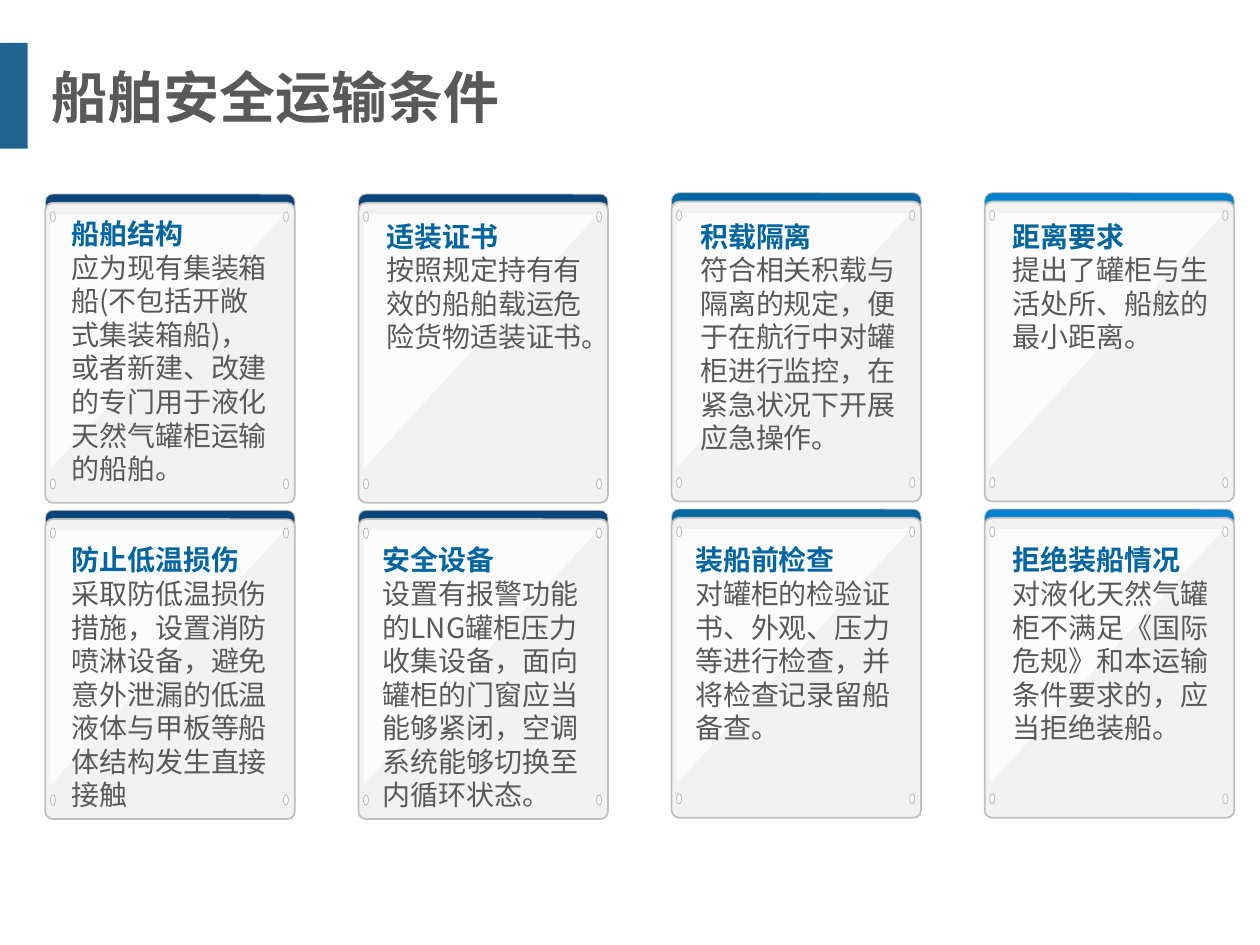
from lxml.etree import SubElement
from pptx import Presentation
from pptx.dml.color import RGBColor
from pptx.enum.shapes import MSO_SHAPE
from pptx.enum.text import MSO_ANCHOR, PP_ALIGN
from pptx.oxml.ns import qn
from pptx.util import Inches, Pt

FONT = "Noto Sans CJK SC"
GREY, BORDER, HEADING = "595959", "BFBFBF", "0365A1"
GRID_LEFT, GRID_TOP = 0.36, 1.54
COLUMN_PITCH, ROW_PITCH = 2.485, 2.51
CARD_WIDTH, CARD_HEIGHT = 1.98, 2.38
COLUMN_BANDS = ["0A467C", "0A467C", "0365A1", "0481CE"]
COLUMN_LIFTS = [0, 0, 0.01, 0.01]

CONDITIONS = [
    [
        (0.47, 1.67, "船舶结构", "应为现有集装箱船(不包括开敞式集装箱船)，或者新建、改建的专门用于液化天然气罐柜运输的船舶。"),
        (2.97, 1.69, "适装证书", "按照规定持有有效的船舶载运危险货物适装证书。"),
        (5.46, 1.69, "积载隔离", "符合相关积载与隔离的规定，便于在航行中对罐柜进行监控，在紧急状况下开展应急操作。"),
        (7.94, 1.69, "距离要求", "提出了罐柜与生活处所、船舷的最小距离。"),
    ],
    [
        (0.47, 4.26, "防止低温损伤", "采取防低温损伤措施，设置消防喷淋设备，避免意外泄漏的低温液体与甲板等船体结构发生直接接触"),
        (2.94, 4.26, "安全设备", "设置有报警功能的LNG罐柜压力收集设备，面向罐柜的门窗应当能够紧闭，空调系统能够切换至内循环状态。"),
        (5.42, 4.26, "装船前检查", "对罐柜的检验证书、外观、压力等进行检查，并将检查记录留船备查。"),
        (7.94, 4.26, "拒绝装船情况", "对液化天然气罐柜不满足《国际危规》和本运输条件要求的，应当拒绝装船。"),
    ],
]


def color(hex_string):
    return RGBColor.from_string(hex_string)


def add_figure(shapes, preset, box, fill, border_width=None, opacity=None):
    figure = shapes.add_shape(preset, *map(Inches, box))
    figure.shadow.inherit = False
    figure.fill.solid()
    figure.fill.fore_color.rgb = color(fill)
    if opacity is not None:
        tint = figure._element.spPr.find(qn("a:solidFill"))[0]
        SubElement(tint, qn("a:alpha"), val=str(opacity * 1000))
    if border_width is None:
        figure.line.fill.background()
    else:
        figure.line.color.rgb = color(BORDER)
        figure.line.width = Pt(border_width)
    return figure


def format_paragraph(paragraph, size, hex_string, bold):
    paragraph.alignment = PP_ALIGN.LEFT
    for run in paragraph.runs:
        run.font.size = Pt(size)
        run.font.bold = bold
        run.font.name = FONT
        run.font.color.rgb = color(hex_string)
        SubElement(run._r.get_or_add_rPr(), qn("a:ea"), typeface=FONT)


def add_title(slide, wording):
    title = slide.shapes.title
    title.left, title.top, title.width, title.height = map(Inches, (0.31, 0.34, 8.79, 0.84))
    title.text_frame.text = wording
    title.text_frame.vertical_anchor = MSO_ANCHOR.MIDDLE
    format_paragraph(title.text_frame.paragraphs[0], 32, GREY, True)


def add_card(slide, row, column):
    left = GRID_LEFT + column * COLUMN_PITCH
    top = GRID_TOP + row * ROW_PITCH - COLUMN_LIFTS[column]
    card = slide.shapes.add_group_shape().shapes
    for offset, fill, border_width in ((0, COLUMN_BANDS[column], 0.5), (0.07, "F2F2F2", 1)):
        panel = add_figure(card, MSO_SHAPE.ROUNDED_RECTANGLE,
                           (left, top + offset, CARD_WIDTH, CARD_HEIGHT), fill, border_width)
        panel.adjustments[0] = 0.03
    gloss = add_figure(card, MSO_SHAPE.ISOSCELES_TRIANGLE,
                       (left + 0.04, top + 0.16, 1.86, 2.02), "FFFFFF", opacity=79)
    gloss.adjustments[0] = 1
    gloss.rotation = 180
    for rivet_top in (0.14, 2.26):
        for rivet_left in (0.04, 1.89):
            add_figure(card, MSO_SHAPE.OVAL,
                       (left + rivet_left, top + rivet_top, 0.04, 0.08), "FFFFFF", 0.5)


def add_condition(slide, left, top, heading, detail):
    condition = slide.shapes.add_textbox(*map(Inches, (left, top, 1.77, 1.8))).text_frame
    condition.word_wrap = True
    condition.text = heading
    condition.add_paragraph().text = detail
    for paragraph, hex_string, bold in zip(condition.paragraphs, (HEADING, GREY), (True, False)):
        paragraph.line_spacing = Pt(19.2)
        format_paragraph(paragraph, 16, hex_string, bold)


def main():
    presentation = Presentation()
    presentation.slide_width, presentation.slide_height = Inches(10), Inches(7.5)
    slide = presentation.slides.add_slide(presentation.slide_layouts[5])
    add_figure(slide.shapes, MSO_SHAPE.RECTANGLE, (0, 0.34, 0.22, 0.84), "095385", opacity=90)
    add_title(slide, "船舶安全运输条件")
    for row, conditions in enumerate(CONDITIONS):
        for column, condition in enumerate(conditions):
            add_card(slide, row, column)
            add_condition(slide, *condition)
    presentation.save("out.pptx")


if __name__ == "__main__":
    main()
